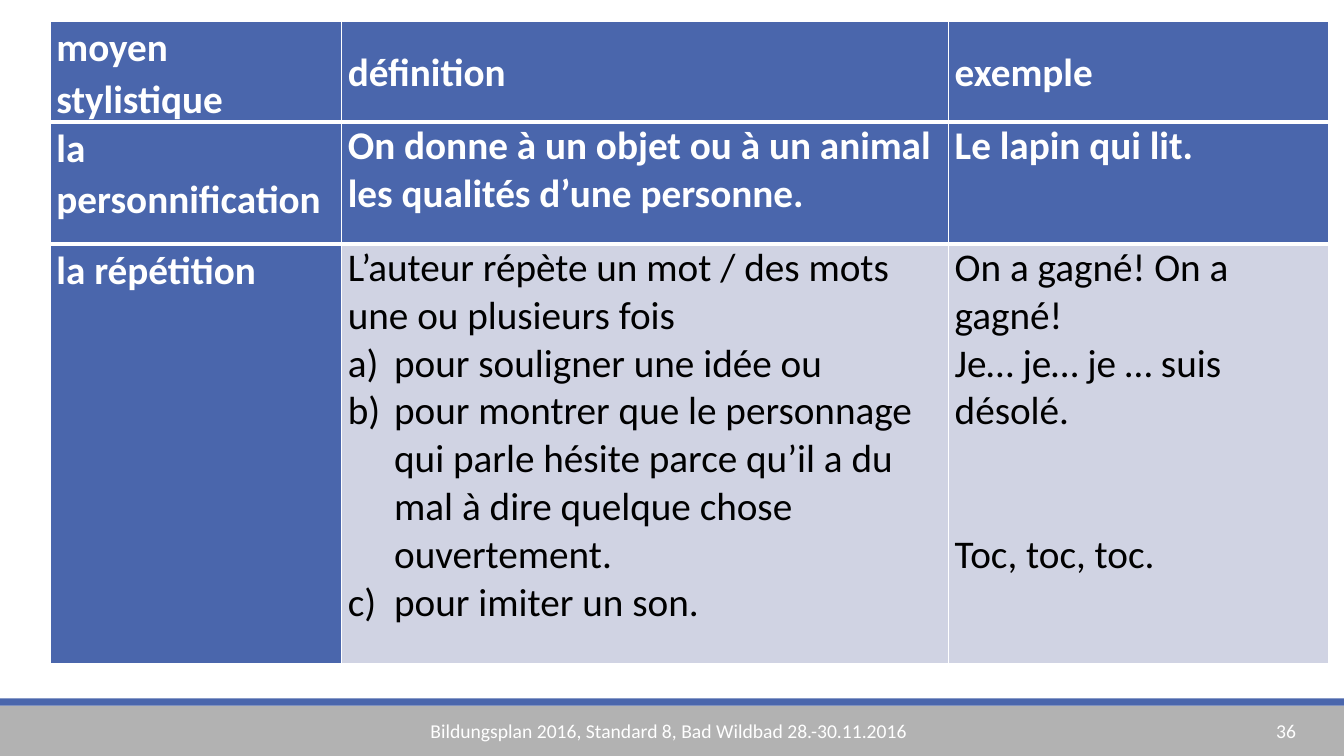
from lxml.etree import SubElement
from pptx import Presentation
from pptx.dml.color import RGBColor
from pptx.enum.shapes import MSO_SHAPE
from pptx.enum.text import MSO_ANCHOR, PP_ALIGN
from pptx.oxml.ns import qn
from pptx.util import Inches, Pt

# Content
HEADINGS = ["moyen stylistique", "définition", "exemple"]
DEVICES = [
    [
        ["la personnification"],
        ["On donne à un objet ou à un animal les qualités d’une personne."],
        ["Le lapin qui lit."],
    ],
    [
        ["la répétition"],
        [
            "L’auteur répète un mot / des mots une ou plusieurs fois",
            ("list", "pour souligner une idée ou"),
            ("list", "pour montrer que le personnage qui parle hésite "
                     "parce qu’il a du mal à dire quelque chose ouvertement."),
            ("list", "pour imiter un son."),
        ],
        [
            "On a gagné! On a gagné!",
            "Je… je… je … suis désolé.",
            ("gap", "Toc, toc, toc."),
        ],
    ],
]
FOOTER = "Bildungsplan 2016, Standard 8, Bad Wildbad 28.-30.11.2016"
PAGE = "36"

# Style
COLORS = {"blue": "4A66AC", "pale": "D0D3E3", "grey": "B2B2B2",
          "white": "FFFFFF", "black": "000000"}
FONT = "Calibri"
COLUMNS = [2.89, 6.02, 3.77]
LEFT, HEADER_TOP, HEADER_HEIGHT = 0.5, 0.21, 1
ROW_HEIGHTS = [1.21, 4.16]
LIST_INDENT = 0.46
TWO_LINES = Pt(68.4)


def rgb(name):
    return RGBColor.from_string(COLORS[name])


def add_run(paragraph, text, size, color, bold=False):
    run = paragraph.add_run()
    run.text = text
    run.font.name = FONT
    run.font.size = Pt(size)
    run.font.bold = bold
    run.font.color.rgb = rgb(color)


def number_with_letters(paragraph):
    properties = paragraph._p.get_or_add_pPr()
    properties.set("marL", str(Inches(LIST_INDENT)))
    properties.set("indent", str(-Inches(LIST_INDENT)))
    SubElement(properties, qn("a:buFont"), typeface="+mj-lt")
    SubElement(properties, qn("a:buAutoNum"), type="alphaLcParenR")


def add_borders(cell, bottom):
    properties = cell._tc.get_or_add_tcPr()
    for side, width in (("L", 1), ("R", 1), ("T", 1), ("B", bottom)):
        line = SubElement(properties, qn(f"a:ln{side}"), w=str(Pt(width)))
        fill = SubElement(line, qn("a:solidFill"))
        SubElement(fill, qn("a:srgbClr"), val=COLORS["white"])


def fill_cell(cell, paragraphs, strong, spaced, bottom):
    add_borders(cell, bottom)
    cell.fill.solid()
    cell.fill.fore_color.rgb = rgb("blue" if strong else "pale")
    cell.margin_left = cell.margin_right = Inches(0.06)
    cell.margin_top = cell.margin_bottom = 0
    frame = cell.text_frame
    for index, entry in enumerate(paragraphs):
        kind, text = entry if isinstance(entry, tuple) else ("plain", entry)
        paragraph = frame.add_paragraph() if index else frame.paragraphs[0]
        if spaced:
            paragraph.line_spacing = 1.07
            paragraph.space_before = paragraph.space_after = Pt(6)
        if kind == "list":
            number_with_letters(paragraph)
        elif kind == "gap":
            paragraph.space_before = TWO_LINES
        add_run(paragraph, text, 28, "white" if strong else "black", strong)


def add_grid(slide, top, heights):
    grid = slide.shapes.add_table(
        len(heights), len(COLUMNS), Inches(LEFT), Inches(top),
        Inches(sum(COLUMNS)), Inches(sum(heights))).table
    for column, width in zip(grid.columns, COLUMNS):
        column.width = Inches(width)
    for row, height in zip(grid.rows, heights):
        row.height = Inches(height)
    return grid


def add_bar(slide, top, height, color):
    bar = slide.shapes.add_shape(MSO_SHAPE.RECTANGLE, 0, Inches(top),
                                 Inches(13.33), Inches(height))
    bar.shadow.inherit = False
    bar.fill.solid()
    bar.fill.fore_color.rgb = rgb(color)
    bar.line.fill.background()


def add_footer_text(slide, left, width, text):
    box = slide.shapes.add_textbox(Inches(left), Inches(7.08),
                                   Inches(width), Inches(0.34))
    box.text_frame.word_wrap = True
    paragraph = box.text_frame.paragraphs[0]
    paragraph.alignment = PP_ALIGN.LEFT
    add_run(paragraph, text, 14, "white")


def main():
    deck = Presentation()
    deck.slide_width, deck.slide_height = Inches(13.33), Inches(7.5)
    slide = deck.slides.add_slide(deck.slide_layouts[6])

    # Footer band
    add_bar(slide, 7, 0.5, "grey")
    add_bar(slide, 6.93, 0.07, "blue")
    add_footer_text(slide, 4.17, 4.99, FOOTER)
    add_footer_text(slide, 12.56, 0.77, PAGE)

    # Stylistic devices
    devices = add_grid(slide, HEADER_TOP + HEADER_HEIGHT, ROW_HEIGHTS)
    for r, device in enumerate(DEVICES):
        for c, paragraphs in enumerate(device):
            fill_cell(devices.cell(r, c), paragraphs, strong=r == 0 or c == 0,
                      spaced=c == 0, bottom=1 if r else 3)

    # Column headings
    headings = add_grid(slide, HEADER_TOP, [HEADER_HEIGHT])
    for c, heading in enumerate(HEADINGS):
        cell = headings.cell(0, c)
        fill_cell(cell, [heading], strong=True, spaced=True, bottom=3)
        cell.vertical_anchor = MSO_ANCHOR.MIDDLE if c else MSO_ANCHOR.TOP

    deck.save("out.pptx")


if __name__ == "__main__":
    main()
